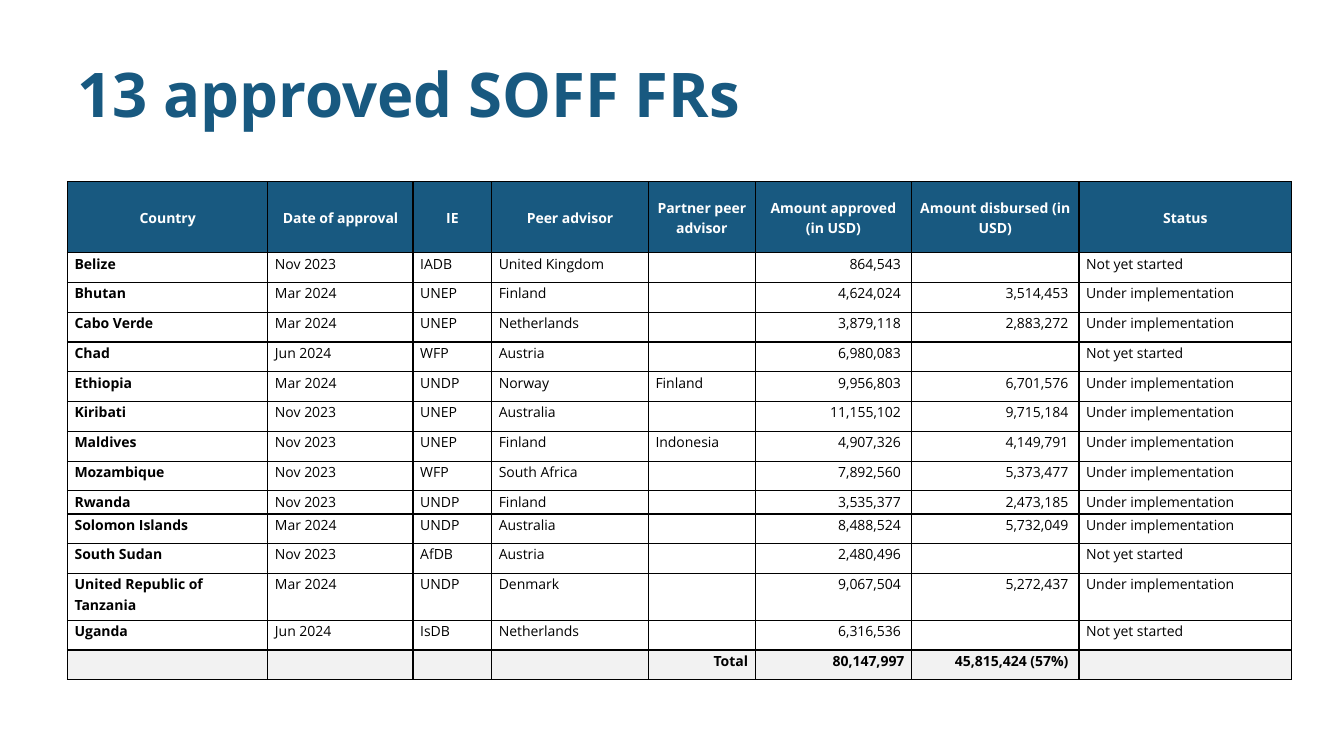
from lxml.etree import SubElement
from pptx import Presentation
from pptx.dml.color import RGBColor
from pptx.enum.text import MSO_ANCHOR, PP_ALIGN
from pptx.oxml.ns import qn
from pptx.util import Cm, Pt

# Content
TITLE = "13 approved SOFF FRs"
HEADINGS = ("Country", "Date of approval", "IE", "Peer advisor", "Partner peer advisor",
            "Amount approved (in USD)", "Amount disbursed (in USD)", "Status")
WAITING, RUNNING = "Not yet started", "Under implementation"
COUNTRIES = [
    ("Belize", "Nov 2023", "IADB", "United Kingdom", "", "864,543", "", WAITING),
    ("Bhutan", "Mar 2024", "UNEP", "Finland", "", "4,624,024", "3,514,453", RUNNING),
    ("Cabo Verde", "Mar 2024", "UNEP", "Netherlands", "", "3,879,118", "2,883,272", RUNNING),
    ("Chad", "Jun 2024", "WFP", "Austria", "", "6,980,083", "", WAITING),
    ("Ethiopia", "Mar 2024", "UNDP", "Norway", "Finland", "9,956,803", "6,701,576", RUNNING),
    ("Kiribati", "Nov 2023", "UNEP", "Australia", "", "11,155,102", "9,715,184", RUNNING),
    ("Maldives", "Nov 2023", "UNEP", "Finland", "Indonesia", "4,907,326", "4,149,791", RUNNING),
    ("Mozambique", "Nov 2023", "WFP", "South Africa", "", "7,892,560", "5,373,477", RUNNING),
    ("Rwanda", "Nov 2023", "UNDP", "Finland", "", "3,535,377", "2,473,185", RUNNING),
    ("Solomon Islands", "Mar 2024", "UNDP", "Australia", "", "8,488,524", "5,732,049", RUNNING),
    ("South Sudan", "Nov 2023", "AfDB", "Austria", "", "2,480,496", "", WAITING),
    ("United Republic of Tanzania", "Mar 2024", "UNDP", "Denmark", "", "9,067,504",
     "5,272,437", RUNNING),
    ("Uganda", "Jun 2024", "IsDB", "Netherlands", "", "6,316,536", "", WAITING),
]
TOTALS = ("", "", "", "", "Total", "80,147,997", "45,815,424 (57%)", "")

# Look and measures (cm)
FONT = "Open Sans"
BLUE, GREY, WHITE, BLACK = "185980", "F2F2F2", "FFFFFF", "000000"
COLUMN_WIDTHS = (5.05, 3.66, 1.98, 3.95, 2.69, 3.94, 4.22, 5.36)
HEADING_HEIGHT, ROW_HEIGHT = 1.79, 0.75
SPECIAL_HEIGHTS = {"Rwanda": 0.58, "United Republic of Tanzania": 1.18}
AMOUNT_COLUMNS = (5, 6)
SIDE_MARGIN, AMOUNT_MARGIN = 0.18, 0.27


def color(hex_code):
    return RGBColor.from_string(hex_code)


def style_runs(paragraph, size, hex_code, bold):
    for run in paragraph.runs:
        run.font.name = FONT
        run.font.size = Pt(size)
        run.font.bold = bold
        run.font.color.rgb = color(hex_code)


def draw_borders(cell):
    properties = cell._tc.get_or_add_tcPr()
    for place, side in enumerate(("a:lnL", "a:lnR", "a:lnT", "a:lnB")):
        border = SubElement(properties, qn(side), w=str(Pt(1)))
        fill = SubElement(border, qn("a:solidFill"))
        SubElement(fill, qn("a:srgbClr"), val=BLACK)
        properties.insert(place, border)


def fill_cell(cell, wording, background, hex_code, bold, align, right_margin):
    cell.margin_left, cell.margin_right = Cm(SIDE_MARGIN), Cm(right_margin)
    cell.margin_top = cell.margin_bottom = 0
    if background:
        cell.fill.solid()
        cell.fill.fore_color.rgb = color(background)
    else:
        cell.fill.background()
    draw_borders(cell)
    cell.text_frame.text = wording
    paragraph = cell.text_frame.paragraphs[0]
    paragraph.alignment = align
    paragraph.line_spacing = 1.07
    paragraph.space_before = paragraph.space_after = Pt(3)
    style_runs(paragraph, 10, hex_code, bold)
    if not wording:  # keeps empty cells from stretching their row
        SubElement(paragraph._p, qn("a:endParaRPr"), sz="1000")


presentation = Presentation()
presentation.slide_width, presentation.slide_height = Cm(33.87), Cm(19.05)
slide = presentation.slides.add_slide(presentation.slide_layouts[6])

# Title
title = slide.shapes.add_textbox(Cm(1.7), Cm(0.76), Cm(30.48), Cm(3.18)).text_frame
title.word_wrap = True
title.vertical_anchor = MSO_ANCHOR.MIDDLE
title.text = TITLE
style_runs(title.paragraphs[0], 44, BLUE, True)

# Table grid
rows = [HEADINGS, *COUNTRIES, TOTALS]
heights = [HEADING_HEIGHT] + [SPECIAL_HEIGHTS.get(row[0], ROW_HEIGHT) for row in rows[1:]]
approvals = slide.shapes.add_table(len(rows), len(HEADINGS), Cm(1.7), Cm(4.58),
                                   Cm(sum(COLUMN_WIDTHS)), Cm(sum(heights))).table
approvals.horz_banding = False
for column, width in zip(approvals.columns, COLUMN_WIDTHS):
    column.width = Cm(width)
for table_row, height in zip(approvals.rows, heights):
    table_row.height = Cm(height)

# Table cells
for r, row in enumerate(rows):
    is_heading, is_total = row is HEADINGS, row is TOTALS
    for c, wording in enumerate(row):
        cell = approvals.cell(r, c)
        is_amount = c in AMOUNT_COLUMNS
        align, right_margin = PP_ALIGN.LEFT, SIDE_MARGIN
        if is_heading:
            align = PP_ALIGN.CENTER
            cell.vertical_anchor = MSO_ANCHOR.MIDDLE
        elif is_amount or is_total:
            align = PP_ALIGN.RIGHT
            if is_amount and wording != TOTALS[5]:
                right_margin = AMOUNT_MARGIN
        fill_cell(cell, wording,
                  BLUE if is_heading else GREY if is_total else None,
                  WHITE if is_heading else BLACK,
                  is_heading or is_total or c == 0, align, right_margin)

presentation.save("out.pptx")
